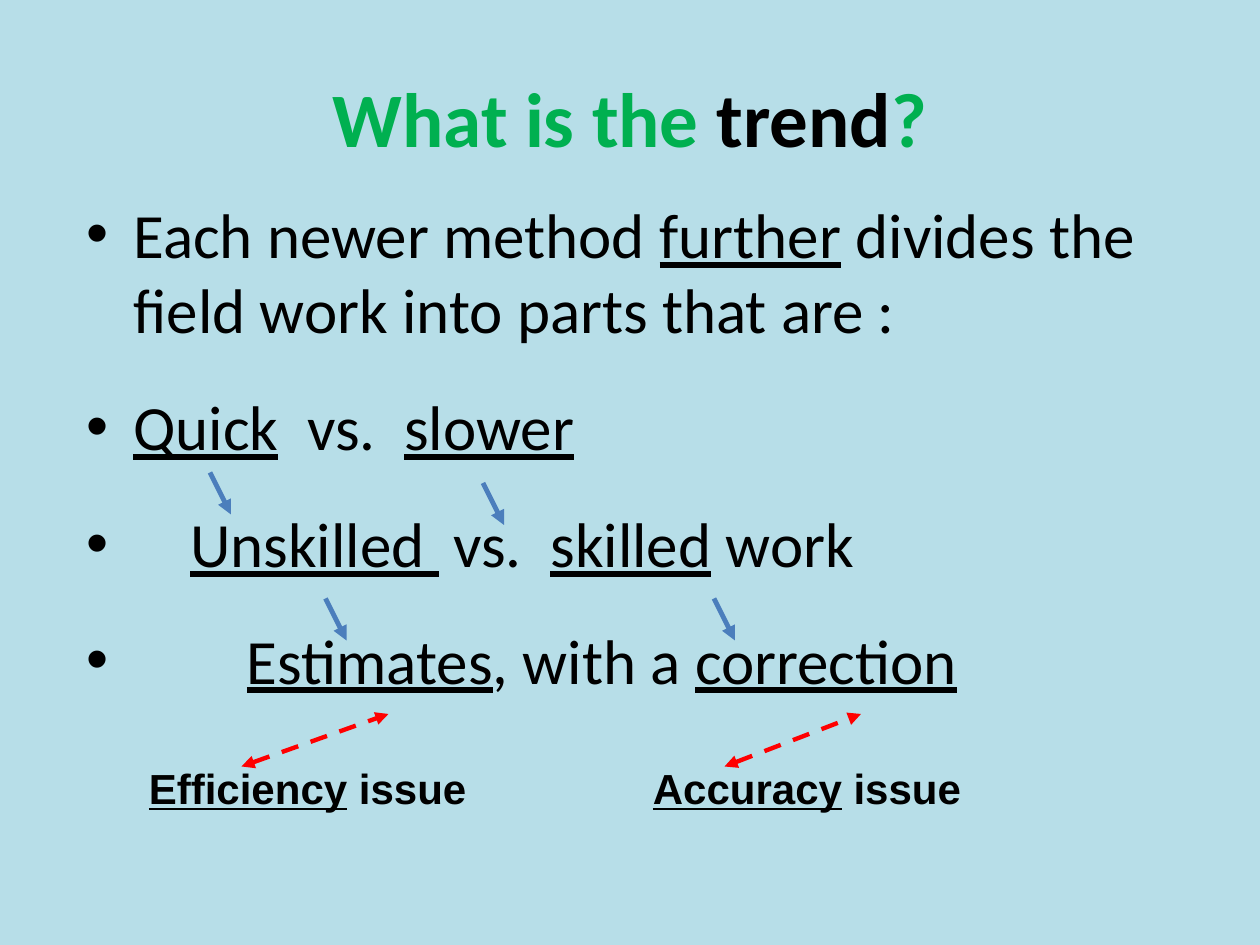
from dataclasses import dataclass

from lxml.etree import SubElement
from pptx import Presentation
from pptx.dml.color import RGBColor as RGB
from pptx.enum.dml import MSO_LINE_DASH_STYLE as Dash
from pptx.enum.shapes import MSO_CONNECTOR as Connector
from pptx.enum.text import MSO_AUTO_SIZE as AutoSize
from pptx.oxml.ns import qn
from pptx.util import Inches, Pt


@dataclass(frozen=True)
class Theme:
    """Colours, fonts and sizes of the slide."""
    background: RGB = RGB(0xB7, 0xDE, 0xE8)
    ink: RGB = RGB(0, 0, 0)
    accent: RGB = RGB(0x00, 0xB0, 0x50)
    step: RGB = RGB(0x4B, 0x7E, 0xBC)
    issue: RGB = RGB(0xFF, 0, 0)
    main_font: str = "Calibri"
    label_font: str = "Arial"
    title_size: int = 44
    body_size: int = 36
    label_size: int = 24
    bullet_gap: float = 23.5


THEME = Theme()
COLUMNS, ROWS = 120, 90
WIDTH, HEIGHT = Inches(10), Inches(7.5)

BULLETS = [
    ("Each newer method _further_ divides the field work into parts that are :", 0),
    ("_Quick_  vs.  _slower_", 0),
    ("_Unskilled _ vs.  _skilled_ work", 1),
    ("_Estimates_, with a _correction_", 2),
]
LABELS = [("_Efficiency_ issue", 13), ("_Accuracy_ issue", 61)]
ISSUE_ARROWS = [(23, 73, 37, 68), (69, 73, 82, 68)]
STEP_ARROWS = [(20, 45), (31, 57), (68, 57), (46, 46)]


def across(columns):
    """Turn grid columns into a length."""
    return round(WIDTH * columns / COLUMNS)


def down(rows):
    """Turn grid rows into a length."""
    return round(HEIGHT * rows / ROWS)


def place(shape, left, top, width, height):
    """Move a shape to a cell range of the grid."""
    shape.left, shape.top = across(left), down(top)
    shape.width, shape.height = across(width), down(height)


def set_font(paragraph, name, size, bold=False):
    """Set the font shared by all runs of a paragraph."""
    font = paragraph.font
    font.name, font.size, font.bold = name, Pt(size), bold
    font.color.rgb = THEME.ink


def write_marked(paragraph, text):
    """Write text, underlining the parts between underscores."""
    for index, part in enumerate(text.split("_")):
        if part:
            run = paragraph.add_run()
            run.text = part
            if index % 2:
                run.font.underline = True


def add_title(slide):
    """Fill the title placeholder in two colours."""
    title = slide.shapes.title
    place(title, 6, 3.6, 108, 15)
    paragraph = title.text_frame.paragraphs[0]
    set_font(paragraph, THEME.main_font, THEME.title_size, bold=True)
    for text, color in [("What is the ", THEME.accent), ("trend", THEME.ink), ("?", THEME.accent)]:
        run = paragraph.add_run()
        run.text = text
        run.font.color.rgb = color


def add_bullets(slide):
    """Fill the body placeholder with stepped bullets."""
    body = slide.placeholders[1]
    place(body, 7, 18, 108, 66)
    frame = body.text_frame
    frame.auto_size = AutoSize.NONE
    for index, (text, step) in enumerate(BULLETS):
        paragraph = frame.add_paragraph() if index else frame.paragraphs[0]
        set_font(paragraph, THEME.main_font, THEME.body_size)
        if index:
            paragraph.space_before = Pt(THEME.bullet_gap)
        indent = across(4.5 + 5.4 * step)
        properties = paragraph._p.get_or_add_pPr()
        properties.set("marL", str(indent))
        properties.set("indent", str(-indent))
        write_marked(paragraph, text)


def add_label(slide, text, left):
    """Add a bold label in the bottom row."""
    box = slide.shapes.add_textbox(across(left), down(72), across(36), down(6))
    box.text_frame.word_wrap = True
    paragraph = box.text_frame.paragraphs[0]
    set_font(paragraph, THEME.label_font, THEME.label_size, bold=True)
    write_marked(paragraph, text)


def add_arrow(slide, start, end, color, weight, ends=("tailEnd",), dash=None):
    """Add a straight arrow between two grid points."""
    arrow = slide.shapes.add_connector(
        Connector.STRAIGHT, across(start[0]), down(start[1]), across(end[0]), down(end[1]))
    arrow.line.color.rgb = color
    arrow.line.width = Pt(weight)
    if dash is not None:
        arrow.line.dash_style = dash
    properties = arrow._element.spPr
    for name in ends:
        SubElement(properties.find(qn("a:ln")), qn(f"a:{name}"), type="triangle")
    SubElement(properties, qn("a:effectLst"))


def main():
    """Build and save the slide."""
    presentation = Presentation()
    presentation.slide_width, presentation.slide_height = WIDTH, HEIGHT
    slide = presentation.slides.add_slide(presentation.slide_layouts[1])
    fill = slide.background.fill
    fill.solid()
    fill.fore_color.rgb = THEME.background
    add_title(slide)
    add_bullets(slide)
    for text, left in LABELS:
        add_label(slide, text, left)
    for x1, y1, x2, y2 in ISSUE_ARROWS:
        add_arrow(slide, (x1, y1), (x2, y2), THEME.issue, 2.5, ("headEnd", "tailEnd"), Dash.DASH)
    for x, y in STEP_ARROWS:
        add_arrow(slide, (x, y), (x + 2, y + 4), THEME.step, 2.75)
    presentation.save("out.pptx")


if __name__ == "__main__":
    main()
